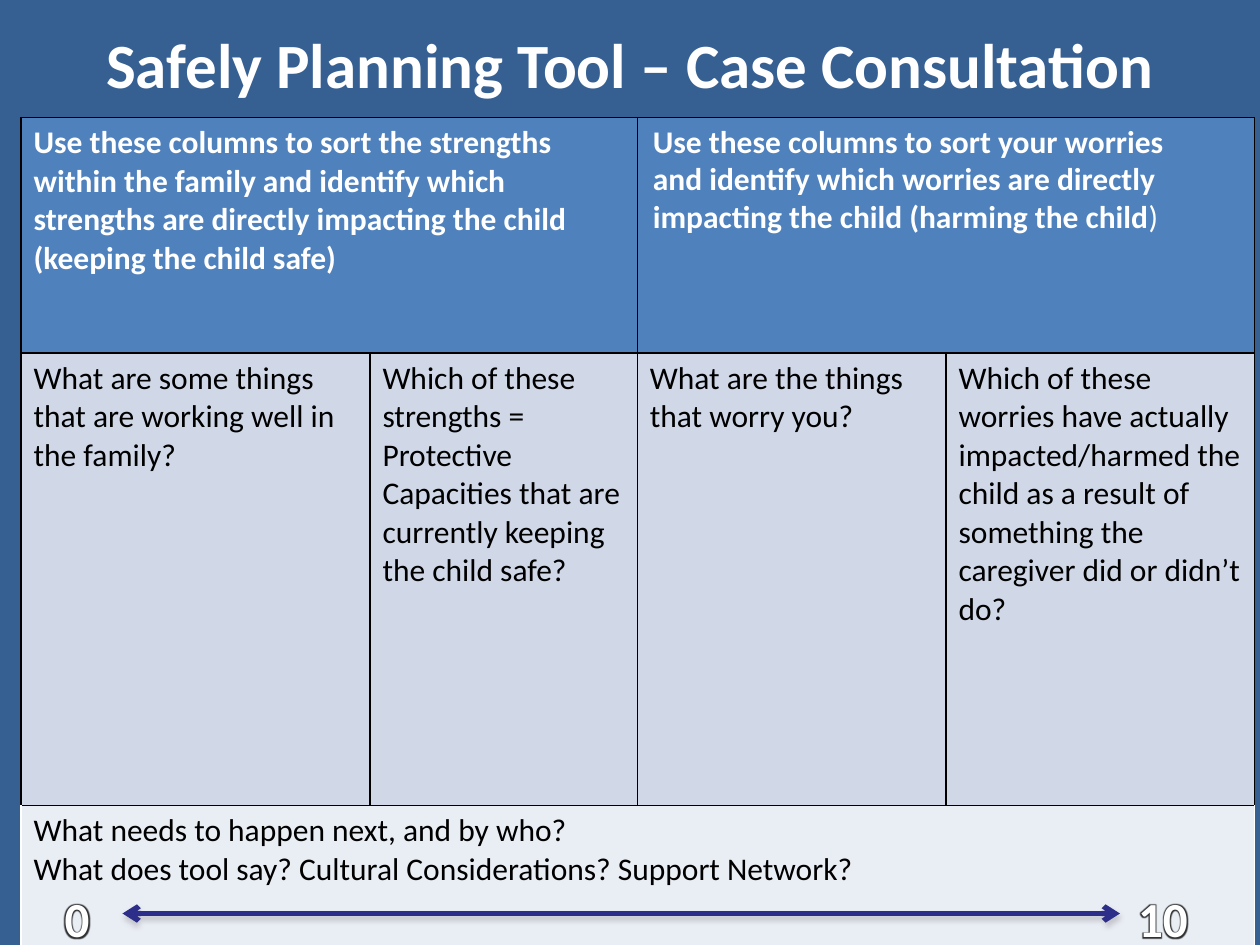
from lxml.etree import SubElement
from pptx import Presentation
from pptx.dml.color import RGBColor
from pptx.enum.shapes import MSO_CONNECTOR as CONN
from pptx.enum.text import MSO_ANCHOR as ANCHOR, PP_ALIGN as ALIGN
from pptx.oxml import parse_xml
from pptx.oxml.ns import nsdecls, qn
from pptx.util import Pt

FONT = "Calibri"
WHITE, BLACK = "FFFFFF", "000000"
HEADER, BODY, FOOTER = "4F81BD", "D0D8E8", "E9EDF4"
COLS = [199.4, 152.8, 176.4, 176.4]
ROWS = [134.6, 258.5, 79.9]
STRENGTHS = ("Use these columns to sort the strengths within the family and identify "
             "which strengths are directly impacting the child (keeping the child safe)")
WORRIES = ("Use these columns to sort your worries and identify which worries are "
           "directly impacting the child (harming the child")
QUESTIONS = [
    "What are some things that are working well in the family?",
    "Which of these strengths = Protective Capacities that are currently keeping the child safe?",
    "What are the things that worry you?",
    "Which of these worries have actually impacted/harmed the child as a result of "
    "something the caregiver did or didn’t do?",
]
NEXT_STEPS = ["What needs to happen next, and by who?",
              "What does tool say? Cultural Considerations? Support Network?"]


def rgb(color):
    return RGBColor.from_string(color)


def add_run(p, text, size, color, bold=False):
    r = p.add_run()
    r.text = text
    r.font.size = Pt(size)
    r.font.name = FONT
    r.font.bold = bold
    r.font.color.rgb = rgb(color)
    return r


def add_text(shapes, box, runs, size, align=ALIGN.LEFT, anchor=ANCHOR.TOP):
    tf = shapes.add_textbox(*map(Pt, box)).text_frame
    tf.word_wrap = True
    tf.vertical_anchor = anchor
    p = tf.paragraphs[0]
    p.alignment = align
    return [add_run(p, text, size, WHITE, bold) for text, bold in runs]


def set_borders(cell, sides):
    tcPr = cell._tc.get_or_add_tcPr()
    for i, (side, color) in enumerate(sides.items()):
        ln = parse_xml(f'<a:{side} {nsdecls("a")} w="12700"><a:solidFill>'
                       f'<a:srgbClr val="{color}"/></a:solidFill></a:{side}>')
        tcPr.insert(i, ln)


def fill_cell(cell, lines, fill, color, bold=False):
    cell.fill.solid()
    cell.fill.fore_color.rgb = rgb(fill)
    tf = cell.text_frame
    for i, line in enumerate(lines):
        p = tf.add_paragraph() if i else tf.paragraphs[0]
        add_run(p, line, 18, color, bold)


def add_planning_table(s, left, top):
    frame = s.shapes.add_table(len(ROWS), len(COLS), Pt(left), Pt(top),
                               Pt(sum(COLS)), Pt(sum(ROWS)))
    table = frame.table
    for col, width in zip(table.columns, COLS):
        col.width = Pt(width)
    for row, height in zip(table.rows, ROWS):
        row.height = Pt(height)
    for a, b in [((0, 0), (0, 1)), ((0, 2), (0, 3)), ((2, 0), (2, 3))]:
        table.cell(*a).merge(table.cell(*b))
    fill_cell(table.cell(0, 0), [STRENGTHS], HEADER, WHITE, True)
    fill_cell(table.cell(0, 2), [], HEADER, WHITE)
    for i, question in enumerate(QUESTIONS):
        fill_cell(table.cell(1, i), [question], BODY, BLACK)
    fill_cell(table.cell(2, 0), NEXT_STEPS, FOOTER, BLACK)
    for i in range(len(ROWS)):
        edge = WHITE if i == 2 else BLACK
        for j in range(len(COLS)):
            set_borders(table.cell(i, j), {"lnL": edge, "lnR": edge,
                                           "lnT": BLACK, "lnB": edge})


def add_glow(r):
    glow = parse_xml(f'<a:effectLst {nsdecls("a")}><a:glow rad="38100">'
                     '<a:srgbClr val="000000"><a:alpha val="80000"/></a:srgbClr>'
                     '</a:glow></a:effectLst>')
    r._r.rPr.find(qn("a:solidFill")).addnext(glow)


def add_scale(s, left, top, width, height):
    shapes = s.shapes.add_group_shape().shapes
    for text, x, w in [("0", left, 52), ("10", left + width - 67, 67)]:
        for r in add_text(shapes, (x, top, w, height), [(text, True)], 28, ALIGN.CENTER):
            add_glow(r)
    y = Pt(top + height / 2)
    line = shapes.add_connector(CONN.STRAIGHT, Pt(left + 52), y, Pt(left + width - 58), y)
    line.line.width = Pt(3)
    line.line.color.rgb = rgb("2D2D8A")
    ln = line.line._get_or_add_ln()
    for end in ("headEnd", "tailEnd"):
        SubElement(ln, qn(f"a:{end}"), type="arrow")
    line._element.spPr.append(parse_xml(
        f'<a:effectLst {nsdecls("a")}><a:outerShdw blurRad="39370" dist="22860" '
        'dir="5400000" rotWithShape="0"><a:srgbClr val="808080">'
        '<a:alpha val="35000"/></a:srgbClr></a:outerShdw></a:effectLst>'))


def main():
    prs = Presentation()
    prs.slide_width, prs.slide_height = Pt(720), Pt(540)
    s = prs.slides.add_slide(prs.slide_layouts[6])
    s.background.fill.solid()
    s.background.fill.fore_color.rgb = rgb("376092")
    add_text(s.shapes, (36, 0, 648, 72),
             [("Safely Planning Tool – Case Consultation", True)],
             36, ALIGN.CENTER, ANCHOR.MIDDLE)
    add_planning_table(s, 12, 67.2)
    add_text(s.shapes, (366, 66, 312, 73), [(WORRIES, True), (")", False)], 18)
    add_scale(s, 18, 504, 680, 36)
    prs.save("out.pptx")


if __name__ == "__main__":
    main()
